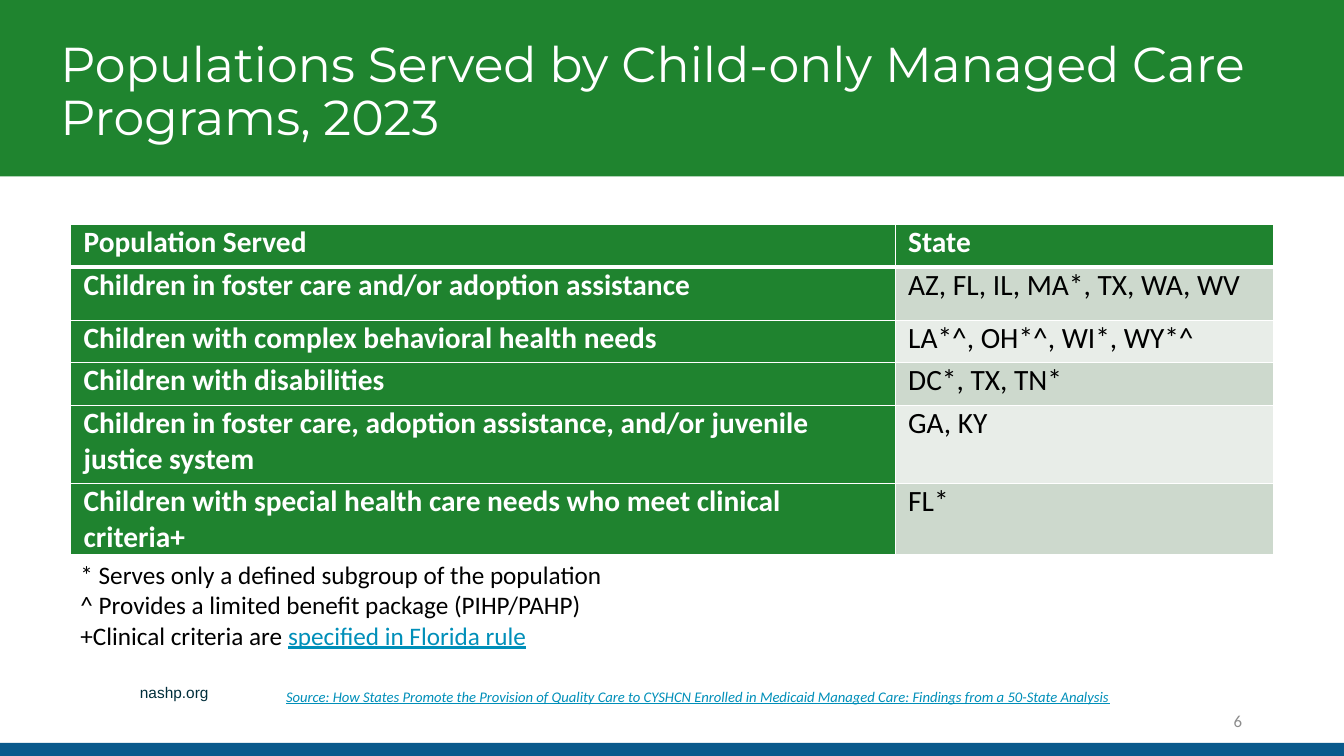
from collections import namedtuple

from lxml import etree
from pptx import Presentation
from pptx.dml.color import RGBColor
from pptx.enum.shapes import MSO_SHAPE
from pptx.enum.text import MSO_ANCHOR, PP_ALIGN
from pptx.oxml.ns import qn
from pptx.util import Inches, Pt

RECTANGLE = MSO_SHAPE.RECTANGLE
TOP, MIDDLE, BOTTOM = MSO_ANCHOR.TOP, MSO_ANCHOR.MIDDLE, MSO_ANCHOR.BOTTOM
LEFT, RIGHT = PP_ALIGN.LEFT, PP_ALIGN.RIGHT

COLORS = {
    "band": "1F842F", "head": "1F832F", "strip": "0A5A8C", "white": "FFFFFF",
    "black": "000000", "odd": "CDD9CD", "even": "E8EDE8", "link": "008FB9",
    "site": "002E3B", "number": "8C8C8C",
}
GRID = Inches(0.1)
PAGE_COLUMNS, PAGE_ROWS = 133.33, 75

TABLE_COLUMNS = [81.8, 37.5]
TABLE_ROWS = [4.2, 5.3, 4.2, 4.2, 7.8, 7]
POPULATIONS = [
    ("Population Served", "State"),
    ("Children in foster care and/or adoption assistance", "AZ, FL, IL, MA*, TX, WA, WV"),
    ("Children with complex behavioral health needs", "LA*^, OH*^, WI*, WY*^"),
    ("Children with disabilities", "DC*, TX, TN*"),
    ("Children in foster care, adoption assistance, and/or juvenile justice system", "GA, KY"),
    ("Children with special health care needs who meet clinical criteria+", "FL*"),
]
NOTES = [
    [("* Serves only a defined subgroup of the population", "note")],
    [("^ Provides a limited benefit package (PIHP/PAHP)", "note")],
    [("+Clinical criteria are ", "note"), ("specified in Florida rule", "note_link")],
]
SOURCE = ("Source: How States Promote the Provision of Quality Care to CYSHCN Enrolled "
          "in Medicaid Managed Care: Findings from a 50-State Analysis")

Box = namedtuple("Box", "left top width height")
Style = namedtuple("Style", "font size color bold italic underline", defaults=(False,) * 3)
STYLES = {
    "title": Style("Montserrat", 35, "white"),
    "head": Style("Calibri", 21, "white", bold=True),
    "state": Style("Calibri", 21, "black"),
    "note": Style("Calibri", 18, "black"),
    "note_link": Style("Calibri", 18, "link", underline=True),
    "source": Style("Calibri", 10.5, "link", italic=True, underline=True),
    "site": Style("Arial", 11, "site"),
    "number": Style("Calibri", 12, "number"),
}


def inside(box, left, top, width, height):
    """Return a box placed relative to another one."""
    return Box(box.left + left, box.top + top, width, height)


def lengths(box):
    """Return the four sides of a box as slide lengths."""
    return [round(side * GRID) for side in box]


def color(name):
    """Return a named colour."""
    return RGBColor.from_string(COLORS[name])


def add_span(para, text, style_name):
    """Add one styled run to a paragraph."""
    style = STYLES[style_name]
    span = para.add_run()
    span.text = text
    font = span.font
    font.name, font.size = style.font, Pt(style.size)
    font.bold, font.italic, font.underline = style.bold, style.italic, style.underline
    font.color.rgb = color(style.color)


def add_text(page, box, paragraphs, anchor=TOP, align=LEFT):
    """Add a wrapping text box and return its frame."""
    frame = page.shapes.add_textbox(*lengths(box)).text_frame
    frame.word_wrap = True
    frame.vertical_anchor = anchor
    for index, spans in enumerate(paragraphs):
        para = frame.add_paragraph() if index else frame.paragraphs[0]
        para.alignment = align
        for text, style_name in spans:
            add_span(para, text, style_name)
    return frame


def add_band(page, box, fill):
    """Add a plain filled rectangle."""
    band = page.shapes.add_shape(RECTANGLE, *lengths(box))
    band.shadow.inherit = False
    band.fill.solid()
    band.fill.fore_color.rgb = color(fill)
    band.line.fill.background()


def add_borders(cell, top, bottom):
    """Draw white cell borders ahead of the cell fill."""
    properties = cell._tc.get_or_add_tcPr()
    for side, width in (("L", 1), ("R", 1), ("T", top), ("B", bottom)):
        line = etree.SubElement(properties, qn(f"a:ln{side}"), w=str(Pt(width)))
        fill = etree.SubElement(line, qn("a:solidFill"))
        etree.SubElement(fill, qn("a:srgbClr"), val=COLORS["white"])


def fill_cell(cell, text, row, column):
    """Style one table cell by its position."""
    is_head = row == 0 or column == 0
    add_borders(cell, 3 if row == 1 else 1, 3 if row == 0 else 1)
    cell.fill.solid()
    cell.fill.fore_color.rgb = color("head" if is_head else "odd" if row % 2 else "even")
    cell.margin_left = cell.margin_right = Inches(0.13)
    cell.margin_top = cell.margin_bottom = 0
    add_span(cell.text_frame.paragraphs[0], text, "head" if is_head else "state")


def add_header(page, box):
    """Add the green band and the title."""
    add_band(page, box, "band")
    title = "Populations Served by Child-only Managed Care Programs, 2023"
    frame = add_text(page, inside(box, 6, 2.2, 121.4, 12.8), [[(title, "title")]], BOTTOM)
    frame.margin_left = 0
    frame.paragraphs[0].line_spacing = 0.9


def add_populations(page, box):
    """Add the table of populations and states."""
    shape = page.shapes.add_table(len(TABLE_ROWS), len(TABLE_COLUMNS), *lengths(box))
    table = shape.table
    for column, width in zip(table.columns, TABLE_COLUMNS):
        column.width = round(width * GRID)
    for row, height in zip(table.rows, TABLE_ROWS):
        row.height = round(height * GRID)
    for row, texts in enumerate(POPULATIONS):
        for column, text in enumerate(texts):
            fill_cell(table.cell(row, column), text, row, column)


def add_body(page, box):
    """Add the table with its notes below."""
    add_populations(page, inside(box, 0, 0, sum(TABLE_COLUMNS), sum(TABLE_ROWS)))
    add_text(page, inside(box, 0, sum(TABLE_ROWS), 86.7, 10.1), NOTES)


def add_footer(page, box):
    """Add the site, source, page number and bottom strip."""
    add_text(page, inside(box, 12.9, 0, 14, 2.9), [[("nashp.org", "site")]])
    add_text(page, inside(box, 27.4, 0.4, 84.6, 2.9), [[(SOURCE, "source")]])
    add_text(page, inside(box, 94.2, 2.2, 30, 4), [[("6", "number")]], MIDDLE, RIGHT)
    add_band(page, inside(box, 0, box.height - 1.3, box.width, 1.3), "strip")


def main():
    """Build and save the deck."""
    deck = Presentation()
    deck.slide_width = round(PAGE_COLUMNS * GRID)
    deck.slide_height = PAGE_ROWS * GRID
    page = deck.slides.add_slide(deck.slide_layouts[6])
    add_header(page, Box(0, 0, PAGE_COLUMNS, 17.5))
    add_body(page, Box(7, 22.3, sum(TABLE_COLUMNS), 45))
    add_footer(page, Box(0, 67.3, PAGE_COLUMNS, PAGE_ROWS - 67.3))
    deck.save("out.pptx")


if __name__ == "__main__":
    main()
